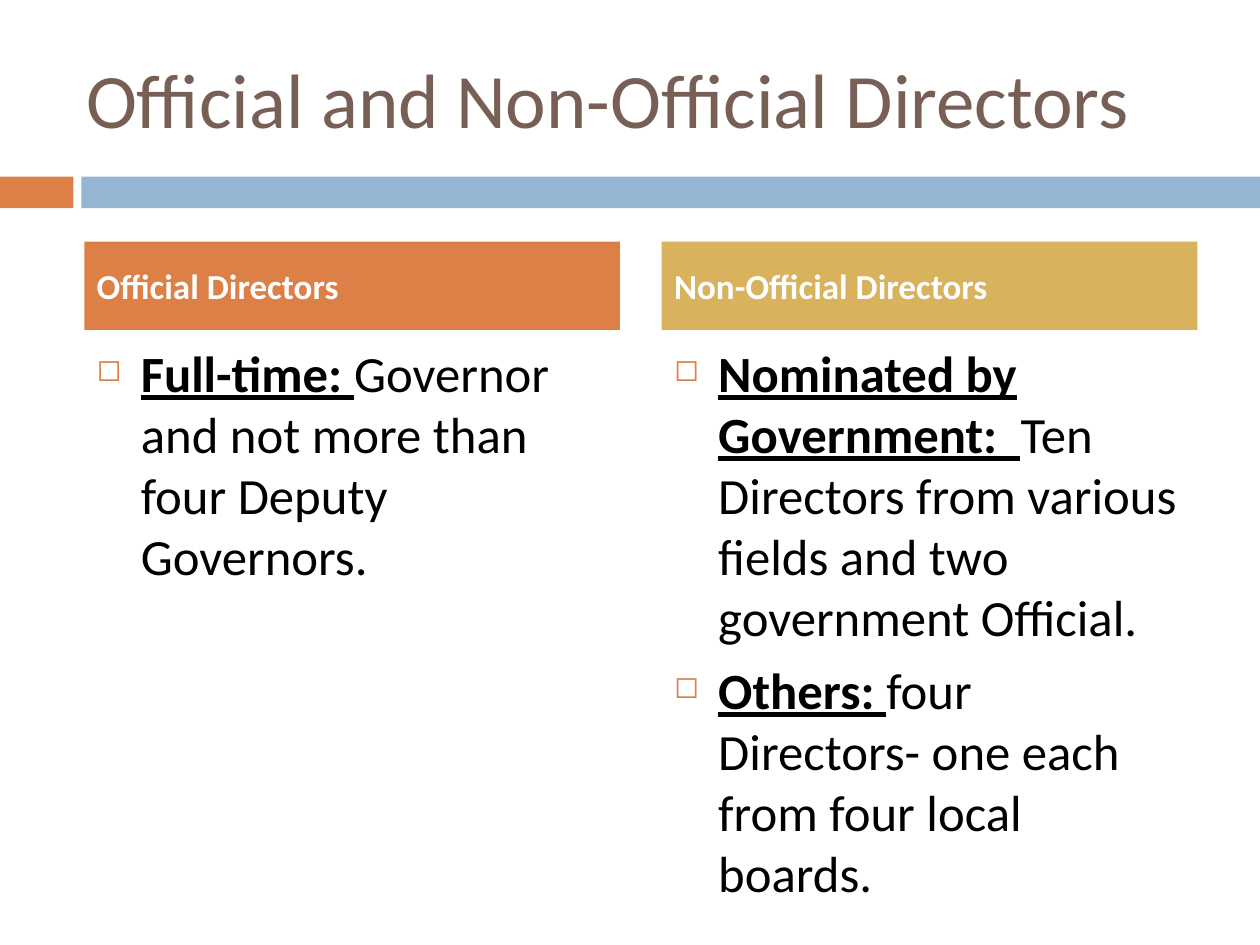
import pptx
import pptx.dml.color
import pptx.enum.shapes
import pptx.enum.text
import pptx.oxml
import pptx.oxml.ns
import pptx.util
from pptx.util import Cm

COLORS = {
    "orange": "DD8047",
    "blue": "94B6D2",
    "gold": "D8B25C",
    "brown": "775F55",
    "black": "000000",
    "white": "FFFFFF",
}
COLUMN_LEFT, COLUMN_STEP, COLUMN_WIDTH = 1.7, 11.64, 10.8
BULLET_INDENT = Cm(0.89)

COLUMNS = [
    ("Official Directors", "orange", [
        ("Full-time: ", "Governor and not more than four Deputy Governors."),
    ]),
    ("Non-Official Directors", "gold", [
        ("Nominated by Government:  ",
         "Ten Directors from various fields and two government Official."),
        ("Others: ", "four Directors- one each from four local boards."),
    ]),
]


def rgb(name):
    return pptx.dml.color.RGBColor.from_string(COLORS[name])


class SlideBuilder:
    def __init__(self, slide, font="Calibri"):
        self.slide = slide
        self.font = font

    def style(self, p, size, color, bold=None):
        p.alignment = pptx.enum.text.PP_ALIGN.LEFT
        p.font.name = self.font
        p.font.size = pptx.util.Pt(size)
        p.font.bold = bold
        p.font.color.rgb = rgb(color)

    def title(self, text, left, top, width, height):
        s = self.slide.shapes.title
        s.left, s.top, s.width, s.height = Cm(left), Cm(top), Cm(width), Cm(height)
        tf = s.text_frame
        tf.text = text
        tf.vertical_anchor = pptx.enum.text.MSO_ANCHOR.MIDDLE
        self.style(tf.paragraphs[0], 44, "brown")

    def bar(self, left, top, width, height, color):
        s = self.slide.shapes.add_shape(
            pptx.enum.shapes.MSO_SHAPE.RECTANGLE,
            Cm(left), Cm(top), Cm(width), Cm(height))
        s.shadow.inherit = False
        s.fill.solid()
        s.fill.fore_color.rgb = rgb(color)
        s.line.fill.background()
        return s

    def heading(self, text, left, top, width, height, color):
        tf = self.bar(left, top, width, height, color).text_frame
        tf.text = text
        tf.word_wrap = True
        tf.vertical_anchor = pptx.enum.text.MSO_ANCHOR.MIDDLE
        self.style(tf.paragraphs[0], 20, "white", bold=True)

    def bullets(self, items, left, top, width, height):
        """Add a list whose items are (underlined lead, plain text) pairs."""
        s = self.slide.shapes.add_textbox(Cm(left), Cm(top), Cm(width), Cm(height))
        tf = s.text_frame
        tf.word_wrap = True
        for i, (lead, text) in enumerate(items):
            p = tf.add_paragraph() if i else tf.paragraphs[0]
            self.style(p, 29, "black")
            p.space_before = pptx.util.Pt(7)
            self.bullet(p)
            r = p.add_run()
            r.text = lead
            r.font.bold = r.font.underline = True
            p.add_run().text = text

    def bullet(self, p):
        ns = pptx.oxml.ns.nsdecls("a")
        pPr = p._p.get_or_add_pPr()
        pPr.set("marL", str(BULLET_INDENT))
        pPr.set("indent", str(-BULLET_INDENT))
        marks = (
            f'<a:buClr {ns}><a:srgbClr val="{COLORS["orange"]}"/></a:buClr>',
            f'<a:buSzPct {ns} val="60000"/>',
            f'<a:buChar {ns} char="◻"/>',
        )
        for position, xml in enumerate(marks, start=1):
            # The marks stand between the spacing and the font defaults
            pPr.insert(position, pptx.oxml.parse_xml(xml))


def main():
    prs = pptx.Presentation()
    prs.slide_width, prs.slide_height = Cm(25.4), Cm(19.05)
    b = SlideBuilder(prs.slides.add_slide(prs.slide_layouts[5]))

    b.bar(0, 3.56, 1.48, 0.64, "orange")
    b.bar(1.64, 3.56, 23.76, 0.64, "blue")
    b.title("Official and Non-Official Directors", 1.48, 0.76, 22.65, 2.42)

    for i, (name, color, items) in enumerate(COLUMNS):
        left = COLUMN_LEFT + i * COLUMN_STEP
        b.heading(name, left, 4.87, COLUMN_WIDTH, 1.78, color)
        b.bullets(items, left, 6.77, COLUMN_WIDTH, 9.95)

    prs.save("out.pptx")


if __name__ == "__main__":
    main()
